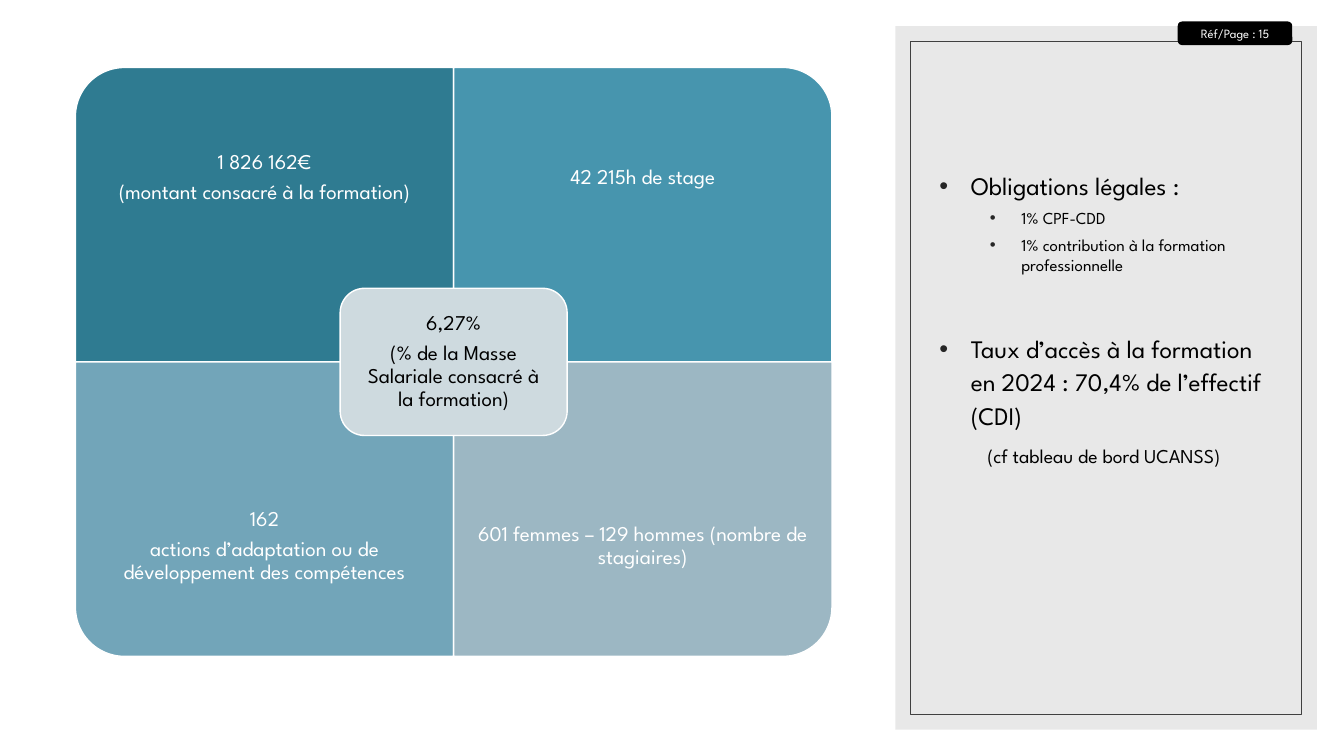
from lxml import etree
from pptx import Presentation
from pptx.dml.color import RGBColor
from pptx.enum.shapes import MSO_SHAPE
from pptx.enum.text import MSO_ANCHOR, PP_ALIGN
from pptx.oxml.ns import qn
from pptx.util import Cm, Pt

CENTER, LEFT = PP_ALIGN.CENTER, PP_ALIGN.LEFT
TOP, MIDDLE = MSO_ANCHOR.TOP, MSO_ANCHOR.MIDDLE
RECTANGLE, ROUNDED = MSO_SHAPE.RECTANGLE, MSO_SHAPE.ROUNDED_RECTANGLE
ONE_ROUND_CORNER = MSO_SHAPE.ROUND_1_RECTANGLE

FONT = "League Spartan"
COLORS = {
    "teal": "2F7B91", "blue": "4795AE", "light blue": "72A5B9",
    "grey blue": "9CB7C3", "pale": "CEDADF", "panel": "D9D9D9",
    "frame": "404040", "bullet": "262626", "white": "FFFFFF", "black": "000000",
}

# Content: column, row, rotation, colour, lines
QUADRANTS = [
    (0, 0, 270, "teal", ["1 826 162€", "(montant consacré à la formation)"]),
    (1, 0, 0, "blue", ["42 215h de stage"]),
    (0, 1, 180, "light blue",
     ["162", "actions d’adaptation ou de développement des compétences"]),
    (1, 1, 90, "grey blue", ["601 femmes – 129 hommes (nombre de stagiaires)"]),
]
CORE = ["6,27%", "(% de la Masse Salariale consacré à la formation)"]
MAIN_POINT = dict(size=18, line=1.1, margin=0.79)
SUB_POINT = dict(size=12, before=5, margin=2.06, level=1)
NOTES = [
    ("Obligations légales :", MAIN_POINT),
    ("1% CPF-CDD", SUB_POINT),
    ("1% contribution à la formation professionnelle", SUB_POINT),
    ("Taux d’accès à la formation en 2024 : 70,4% de l’effectif (CDI)",
     dict(MAIN_POINT, before=39.6)),
    ("(cf tableau de bord UCANSS)",
     dict(size=14, line=1.1, before=8, align=CENTER)),
]
BADGE = "Réf/Page : 15"

# Geometry in centimetres
MATRIX_X, MATRIX_Y = 1.9, 1.7
CELL_W, CELL_H = 9.53, 7.42
TEXT_H = CELL_H * 0.75
CORE_W, CORE_H = 5.72, 3.71
PANEL = (22.56, 0.66, 10.62, 17.73)
FRAME_GAP = 0.38
HANGING = 0.79


def rgb(name):
    return RGBColor.from_string(COLORS[name])


def add_box(kind, left, top, width, height, fill=None, line=None, weight=1):
    box = page.shapes.add_shape(kind, Cm(left), Cm(top), Cm(width), Cm(height))
    box.shadow.inherit = False
    if fill:
        box.fill.solid()
        box.fill.fore_color.rgb = rgb(fill)
    else:
        box.fill.background()
    if line:
        box.line.color.rgb = rgb(line)
        box.line.width = Pt(weight)
    else:
        box.line.fill.background()
    return box


def add_text_box(left, top, width, height):
    return page.shapes.add_textbox(Cm(left), Cm(top), Cm(width), Cm(height))


def set_frame(box, anchor=MIDDLE, inset=None):
    frame = box.text_frame
    frame.word_wrap = True
    frame.vertical_anchor = anchor
    if inset is not None:
        frame.margin_left = frame.margin_right = Cm(inset)
        frame.margin_top = frame.margin_bottom = Cm(inset)


def add_bullet(para, margin):
    props = para._p.get_or_add_pPr()
    props.set("marL", str(Cm(margin)))
    props.set("indent", str(-Cm(HANGING)))
    color = etree.SubElement(props, qn("a:buClr"))
    etree.SubElement(color, qn("a:srgbClr"), val=COLORS["bullet"])
    etree.SubElement(props, qn("a:buFont"), typeface="Arial")
    etree.SubElement(props, qn("a:buChar"), char="•")


def write(box, text, size=15, color="black", align=LEFT, line=1.0,
          before=0, after=0, margin=None, level=0):
    frame = box.text_frame
    para = frame.paragraphs[0]
    if para.runs:
        para = frame.add_paragraph()
    para.level = level
    para.alignment = align
    para.line_spacing = line
    para.space_before, para.space_after = Pt(before), Pt(after)
    if margin is not None:
        add_bullet(para, margin)
    span = para.add_run()
    span.text = text
    span.font.name, span.font.size = FONT, Pt(size)
    span.font.color.rgb = rgb(color)


def write_figures(box, lines, color):
    for text in lines:
        write(box, text, color=color, align=CENTER, line=0.9, after=5.25)


deck = Presentation()
deck.slide_width, deck.slide_height = Cm(33.86), Cm(19.05)
page = deck.slides.add_slide(deck.slide_layouts[6])

# Side panel with its inner frame
left, top, width, height = PANEL
panel = add_box(RECTANGLE, *PANEL, fill="panel")
panel_color = panel.fill._xPr.find(qn("a:solidFill"))[0]
etree.SubElement(panel_color, qn("a:alpha"), val="60000")
add_box(RECTANGLE, left + FRAME_GAP, top + FRAME_GAP,
        width - 2 * FRAME_GAP, height - 2 * FRAME_GAP, line="frame", weight=0.5)

# Four quadrants, each turned so its round corner faces outwards
for column, row, rotation, color, lines in QUADRANTS:
    left, top = MATRIX_X + column * CELL_W, MATRIX_Y + row * CELL_H
    width, height = (CELL_H, CELL_W) if rotation % 180 else (CELL_W, CELL_H)
    cell = add_box(ONE_ROUND_CORNER, left + (CELL_W - width) / 2,
                   top + (CELL_H - height) / 2, width, height, color, "white")
    cell.rotation = rotation
    label = add_text_box(left, top + row * (CELL_H - TEXT_H), CELL_W, TEXT_H)
    set_frame(label, inset=0.3)
    write_figures(label, lines, "white")

# Central figure
core = add_box(ROUNDED, MATRIX_X + CELL_W - CORE_W / 2,
               MATRIX_Y + CELL_H - CORE_H / 2, CORE_W, CORE_H, "pale", "white")
set_frame(core, inset=0.33)
write_figures(core, CORE, "black")

# Notes in the panel
notes = add_text_box(23.42, 4.09, 8.79, 10.01)
set_frame(notes, anchor=TOP)
for text, style in NOTES:
    write(notes, text, **style)

# Page reference
badge = add_box(ROUNDED, 29.69, 0.56, 2.85, 0.56, "black", "black")
set_frame(badge)
write(badge, BADGE, size=9, color="white", align=CENTER)

deck.save("out.pptx")
